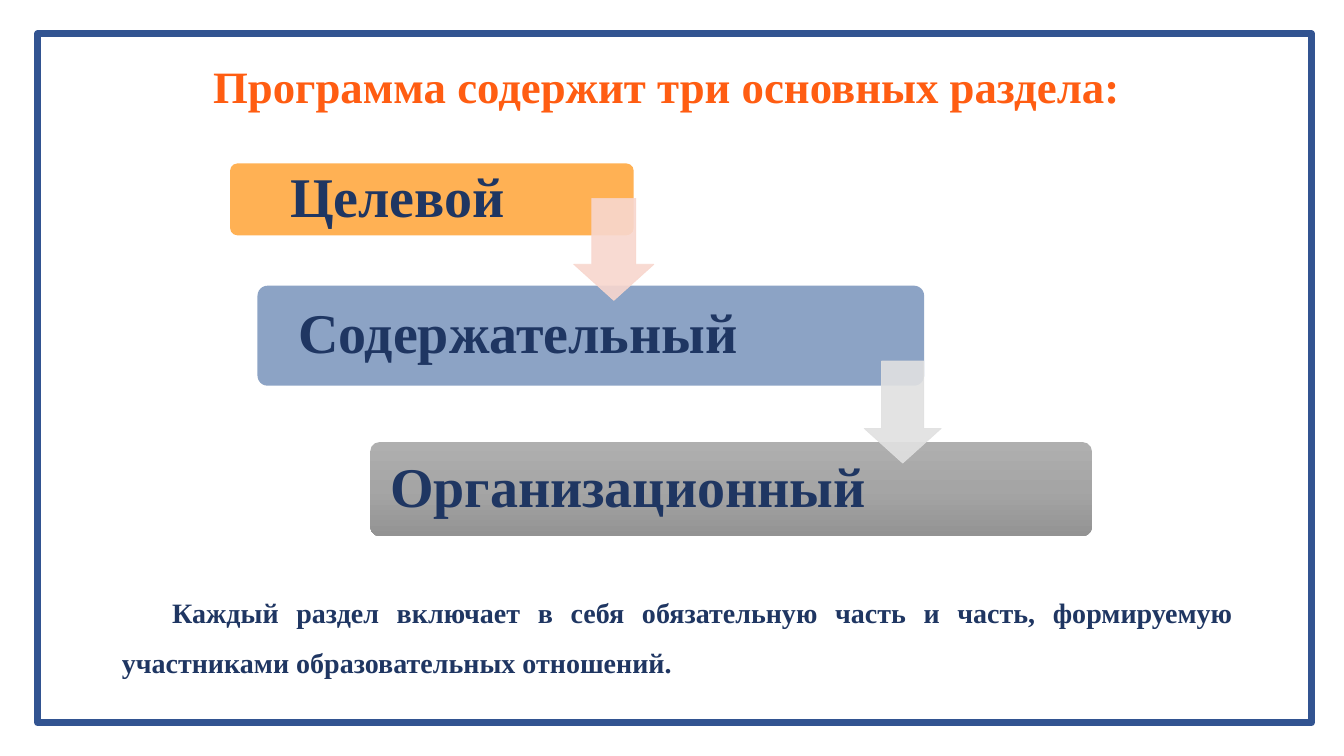
from copy import deepcopy
from dataclasses import dataclass

from lxml import etree
from pptx import Presentation
from pptx.dml.color import RGBColor
from pptx.enum import shapes, text
from pptx.oxml.ns import qn
from pptx.util import Cm, Pt

FONT = "Times New Roman"
HUES = {
    "white": "FFFFFF", "frame": "325491", "title": "FF5D12", "navy": "1F3662",
    "orange": "FFB154", "blue": "8CA3C5",
    "light": "AFAFAF", "grey": "A5A5A5", "dark": "939393",
    "pink": "F8D7CE", "silver": "E1E1E1",
}
KIND = shapes.MSO_SHAPE
ALIGN = text.PP_ALIGN
MIDDLE = text.MSO_ANCHOR.MIDDLE


@dataclass
class Box:
    left: float
    top: float
    width: float
    height: float

    def place(self) -> tuple:
        return Cm(self.left), Cm(self.top), Cm(self.width), Cm(self.height)


@dataclass
class Step:
    label: str
    box: Box
    hues: list[str]
    wide: float
    shift: float = 0.07
    align: ALIGN = ALIGN.CENTER


@dataclass
class Arrow:
    box: Box
    hue: str


STEPS = [
    Step("Целевой", Box(5.8, 4.12, 10.17, 1.81), ["orange"], 7.95, 0.24),
    Step("Содержательный", Box(6.49, 7.2, 16.8, 2.52), ["blue"], 12.98),
    Step("Организационный", Box(9.33, 11.14, 18.19, 2.37),
         ["light", "grey", "dark"], 14.07, align=ALIGN.LEFT),
]
ARROWS = [
    Arrow(Box(14.46, 5, 2.02, 2.57), "pink"),
    Arrow(Box(21.78, 9.1, 1.94, 2.57), "silver"),
]


def tint(name: str) -> RGBColor:
    return RGBColor.from_string(HUES[name])


def blend(shape, hues: list[str]) -> None:
    """Fill top to bottom with three evenly spaced colours."""
    fill = shape.fill
    fill.gradient()
    fill.gradient_angle = 270
    first = shape.element.spPr.find(".//" + qn("a:gs"))
    first.addnext(deepcopy(first))
    for i, (stop, hue) in enumerate(zip(fill.gradient_stops, hues)):
        stop.color.rgb = tint(hue)
        stop.position = i / 2


def draw(slide, kind: KIND, box: Box, hues: list[str], line: str = "",
         width: float = 0.5, adjust: tuple = ()):
    shape = slide.shapes.add_shape(kind, *box.place())
    shape.shadow.inherit = False
    for i, value in enumerate(adjust):
        shape.adjustments[i] = value
    if len(hues) > 1:
        blend(shape, hues)
    else:
        shape.fill.solid()
        shape.fill.fore_color.rgb = tint(hues[0])
    if line:
        shape.line.color.rgb = tint(line)
        shape.line.width = Pt(width)
    else:
        shape.line.fill.background()
    return shape


def fade(shape, share: int) -> None:
    """Set the opacity of fill and line, in percent."""
    for hue in shape.element.spPr.iter(qn("a:srgbClr")):
        etree.SubElement(hue, qn("a:alpha")).set("val", str(share * 1000))


def write(slide, words: str, box: Box, *, size: float, hue: str = "navy",
          align: ALIGN = ALIGN.CENTER, pad: tuple = (0, 0), anchor=None,
          space: float = 1, indent: float = 0) -> None:
    frame = slide.shapes.add_textbox(*box.place()).text_frame
    frame.word_wrap = True
    frame.margin_left = frame.margin_right = Cm(pad[0])
    frame.margin_top = frame.margin_bottom = Cm(pad[1])
    if anchor is not None:
        frame.vertical_anchor = anchor
    para = frame.paragraphs[0]
    para.alignment = align
    para.line_spacing = space
    if indent:
        para._p.get_or_add_pPr().set("indent", str(Cm(indent)))
    run = para.add_run()
    run.text = words
    run.font.name = FONT
    run.font.size = Pt(size)
    run.font.bold = True
    run.font.color.rgb = tint(hue)


def main() -> None:
    deck = Presentation()
    deck.slide_width, deck.slide_height = Cm(33.87), Cm(19.05)
    slide = deck.slides.add_slide(deck.slide_layouts[6])

    draw(slide, KIND.RECTANGLE, Box(0.95, 0.85, 32.1, 17.36), ["white"],
         "frame", 5)
    write(slide, "Программа содержит три основных раздела:",
          Box(1.2, 1.47, 31.2, 1.4), size=32, hue="title")

    for step in STEPS:
        bar = step.box
        draw(slide, KIND.ROUNDED_RECTANGLE, bar, step.hues, adjust=(0.1,))
        label = Box(bar.left + step.shift, bar.top, step.wide, bar.height)
        write(slide, step.label, label, size=40, align=step.align,
              pad=(0.43, 0.43), anchor=MIDDLE, space=0.9)

    for arrow in ARROWS:
        fade(draw(slide, KIND.DOWN_ARROW, arrow.box, [arrow.hue], arrow.hue,
                  adjust=(0.55, 0.45)), 90)

    write(slide, "Каждый раздел включает в себя обязательную часть и часть, "
          "формируемую участниками образовательных отношений.",
          Box(2.82, 14.45, 28.5, 2.82), size=20, align=ALIGN.JUSTIFY,
          pad=(0.25, 0.13), space=1.5, indent=1.27)
    deck.save("out.pptx")


if __name__ == "__main__":
    main()
